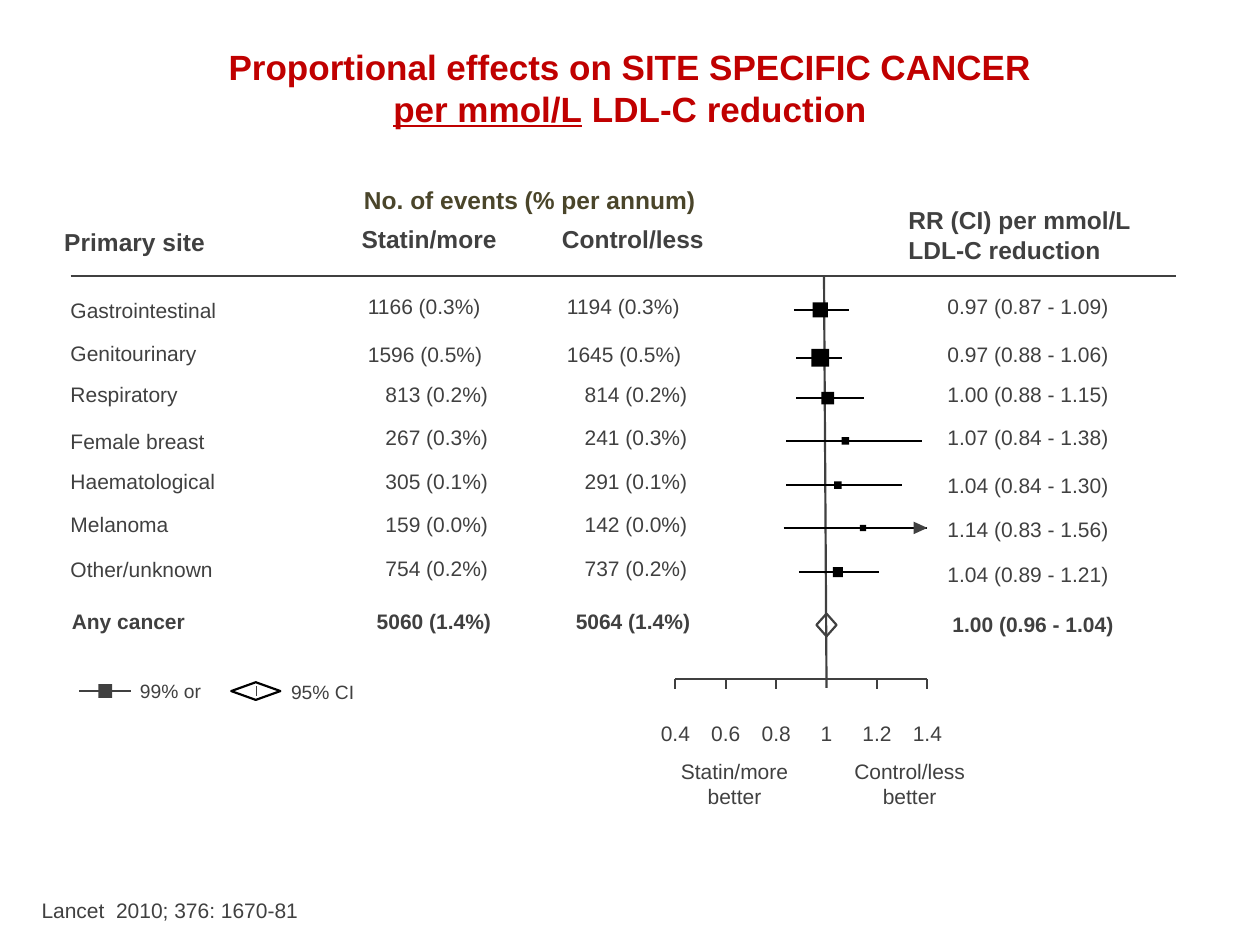
from dataclasses import dataclass

from lxml import etree
from pptx import Presentation
from pptx import util as u
from pptx.dml.color import RGBColor
from pptx.enum import shapes, text
from pptx.oxml.ns import qn

GREY = RGBColor(0x40, 0x40, 0x40)
BLACK = RGBColor(0, 0, 0)
OLIVE = RGBColor(0x4A, 0x45, 0x2A)
RED = RGBColor(0xC0, 0, 0)
FONT = "Arial"
COLUMNS, ROWS = 100, 75
CELL = u.Inches(0.1)
LEFT, CENTER = text.PP_ALIGN.LEFT, text.PP_ALIGN.CENTER


@dataclass
class Box:
    left: float
    top: float
    width: float
    height: float

    def inner(self, left, top, width, height):
        return Box(self.left + left, self.top + top, width, height)

    def emu(self):
        return [cells(n) for n in (self.left, self.top, self.width, self.height)]


@dataclass
class Site:
    name: str
    statin: int
    control: int
    percent: str
    ratio: float
    low: float
    high: float
    marker: float
    name_row: float
    events_row: float
    ratio_row: float
    total: bool = False


SITES = [
    Site("Gastrointestinal", 1166, 1194, "0.3%", 0.97, 0.87, 1.09, 1.2, 1.7, 1.4, 1.4),
    Site("Genitourinary", 1596, 1645, "0.5%", 0.97, 0.88, 1.06, 1.4, 5.1, 5.2, 5.2),
    Site("Respiratory", 813, 814, "0.2%", 1.00, 0.88, 1.15, 1.0, 8.4, 8.4, 8.4),
    Site("Female breast", 267, 241, "0.3%", 1.07, 0.84, 1.38, 0.6, 12.1, 11.8, 11.8),
    Site("Haematological", 305, 291, "0.1%", 1.04, 0.84, 1.30, 0.6, 15.3, 15.3, 15.6),
    Site("Melanoma", 159, 142, "0.0%", 1.14, 0.83, 1.56, 0.5, 18.7, 18.7, 19.1),
    Site("Other/unknown", 754, 737, "0.2%", 1.04, 0.89, 1.21, 0.8, 22.3, 22.2, 22.7),
    Site("Any cancer", 5060, 5064, "1.4%", 1.00, 0.96, 1.04, 1.8, 26.4, 26.4, 26.6, True),
]
TICKS = [0.4, 0.6, 0.8, 1, 1.2, 1.4]
CELLS_PER_UNIT = 20


def cells(count):
    return u.Emu(round(count * CELL))


def set_font(font, size, color, bold=False):
    font.name, font.size, font.bold = FONT, u.Pt(size), bold
    font.color.rgb = color


def add_label(slide, box, lines, size=12, bold=False, color=GREY, align=LEFT):
    frame = slide.shapes.add_textbox(*box.emu()).text_frame
    frame.word_wrap = True
    frame.margin_left = frame.margin_right = frame.margin_top = frame.margin_bottom = 0
    frame.text = lines
    for paragraph in frame.paragraphs:
        paragraph.alignment = align
        set_font(paragraph.font, size, color, bold)


def add_line(slide, start, end, color=GREY, width=1.25):
    ends = [cells(n) for n in (*start, *end)]
    line = slide.shapes.add_connector(shapes.MSO_CONNECTOR.STRAIGHT, *ends)
    line.line.color.rgb = color
    line.line.width = u.Pt(width)
    etree.SubElement(line._element.spPr, qn("a:effectLst"))


def add_mark(slide, x, y, width, height, fill=None, outline=None):
    kind = shapes.MSO_SHAPE.RECTANGLE if fill is not None else shapes.MSO_SHAPE.DIAMOND
    box = Box(x - width / 2, y - height / 2, width, height)
    mark = slide.shapes.add_shape(kind, *box.emu())
    mark.shadow.inherit = False
    if fill is not None:
        mark.fill.solid()
        mark.fill.fore_color.rgb = fill
        mark.line.fill.background()
    else:
        mark.fill.background()
        mark.line.color.rgb = outline
        mark.line.width = u.Pt(1.25)


def add_title(slide, box):
    title = slide.shapes.title
    title.left, title.top, title.width, title.height = box.emu()
    frame = title.text_frame
    frame.vertical_anchor = text.MSO_ANCHOR.TOP
    frame.auto_size = text.MSO_AUTO_SIZE.NONE
    paragraph = frame.paragraphs[0]
    paragraph.alignment = CENTER
    set_font(paragraph.font, 20, RED, True)
    paragraph.add_run().text = "Proportional effects on SITE SPECIFIC CANCER"
    paragraph.add_line_break()
    underlined = paragraph.add_run()
    underlined.text = "per mmol/L"
    underlined.font.underline = True
    paragraph.add_run().text = " LDL-C reduction"


def add_headings(slide, box):
    add_label(slide, box.inner(18.1, 0, 37.7, 2.4), "No. of events (% per annum)", 14, True, OLIVE, CENTER)
    for left, top, width, height, heading in [
        (0, 3.3, 17.1, 2.4, "Primary site"),
        (23.6, 3.1, 16, 2.4, "Statin/more"),
        (39.5, 3.1, 16, 2.4, "Control/less"),
        (67, 1.6, 25, 4.7, "RR (CI) per mmol/L\nLDL-C reduction"),
    ]:
        add_label(slide, box.inner(left, top, width, height), heading, 14, True)
    rule = box.top + box.height
    add_line(slide, (box.left + 0.5, rule), (box.left + box.width, rule))


def add_rows(slide, box):
    for site in SITES:
        add_label(slide, box.inner(0.1 * site.total, site.name_row, 22, 2), site.name, bold=site.total)
        for left, events in [(23.6, site.statin), (39.4, site.control)]:
            indent = 0.7 if site.total else 1.4 * (events < 1000)
            add_label(slide, box.inner(left + indent, site.events_row, 14, 2),
                      f"{events} ({site.percent})", bold=site.total)
        interval = f"{site.ratio:.2f} ({site.low:.2f} - {site.high:.2f})"
        add_label(slide, box.inner(69.6 + 0.4 * site.total, site.ratio_row, 20, 2), interval, bold=site.total)


def add_forest_plot(slide, box):
    def position(ratio):
        return box.left + (ratio - TICKS[0]) * CELLS_PER_UNIT

    axis, right = box.top + box.height, position(TICKS[-1])
    add_line(slide, (position(1), axis + 0.7), (position(1) - 0.2, box.top))
    add_line(slide, (box.left, axis), (right, axis))
    for tick in TICKS:
        x = position(tick)
        if tick != 1:
            add_line(slide, (x, axis), (x, axis + 0.8))
        add_label(slide, Box(x - 1.4, axis + 3.3, 2.8, 2), str(tick), align=CENTER)
    for left, side in [(-2.3, "Statin/more"), (11.6, "Control/less")]:
        add_label(slide, box.inner(left, box.height + 6.3, 14, 4), side + "\nbetter", align=CENTER)

    for site in SITES:
        x, y = position(site.ratio), box.top + site.events_row + 1.3
        low, high = position(site.low), min(position(site.high), right)
        if site.total:
            add_mark(slide, x, y, high - low, site.marker, outline=GREY)
            continue
        add_mark(slide, x + 0.1, y, site.marker, site.marker, BLACK)
        add_line(slide, (low, y), (high, y), BLACK)
        if position(site.high) > right:
            add_arrowhead(slide, right, y)


def add_arrowhead(slide, x, y):
    builder = slide.shapes.build_freeform(cells(x - 1.1), cells(y - 0.5))
    builder.add_line_segments([(cells(x), cells(y)), (cells(x - 1.1), cells(y + 0.5))])
    arrowhead = builder.convert_to_shape()
    arrowhead.shadow.inherit = False
    arrowhead.fill.solid()
    arrowhead.fill.fore_color.rgb = GREY
    arrowhead.line.fill.background()


def add_legend(slide, box):
    middle = box.top + box.height / 2
    add_line(slide, (box.left, middle), (box.left + 4.1, middle))
    add_mark(slide, box.left + 2.05, middle, 1.1, 1.1, GREY)
    add_label(slide, box.inner(4.8, 0, 5.5, 1.8), "99% or", 11)
    diamond = box.left + 14
    add_mark(slide, diamond, middle, 3.9, 1.4, outline=BLACK)
    add_line(slide, (diamond, middle - 0.4), (diamond, middle + 0.4), width=0.25)
    add_label(slide, box.inner(16.8, 0.1, 5.5, 1.8), "95% CI", 11)


def main():
    presentation = Presentation()
    presentation.slide_width, presentation.slide_height = cells(COLUMNS), cells(ROWS)
    slide = presentation.slides.add_slide(presentation.slide_layouts[5])
    add_title(slide, Box(0, 3.1, COLUMNS, 9.9))
    add_headings(slide, Box(5.1, 14.7, 88.2, 7.2))
    add_rows(slide, Box(5.6, 21.9, 87.7, 28.6))
    add_forest_plot(slide, Box(53.6, 21.9, 20, 32))
    add_legend(slide, Box(6.3, 53.9, 22, 1.9))
    add_label(slide, Box(3.3, 71.2, 22, 2), "Lancet  2010; 376: 1670-81")
    presentation.save("out.pptx")


if __name__ == "__main__":
    main()
